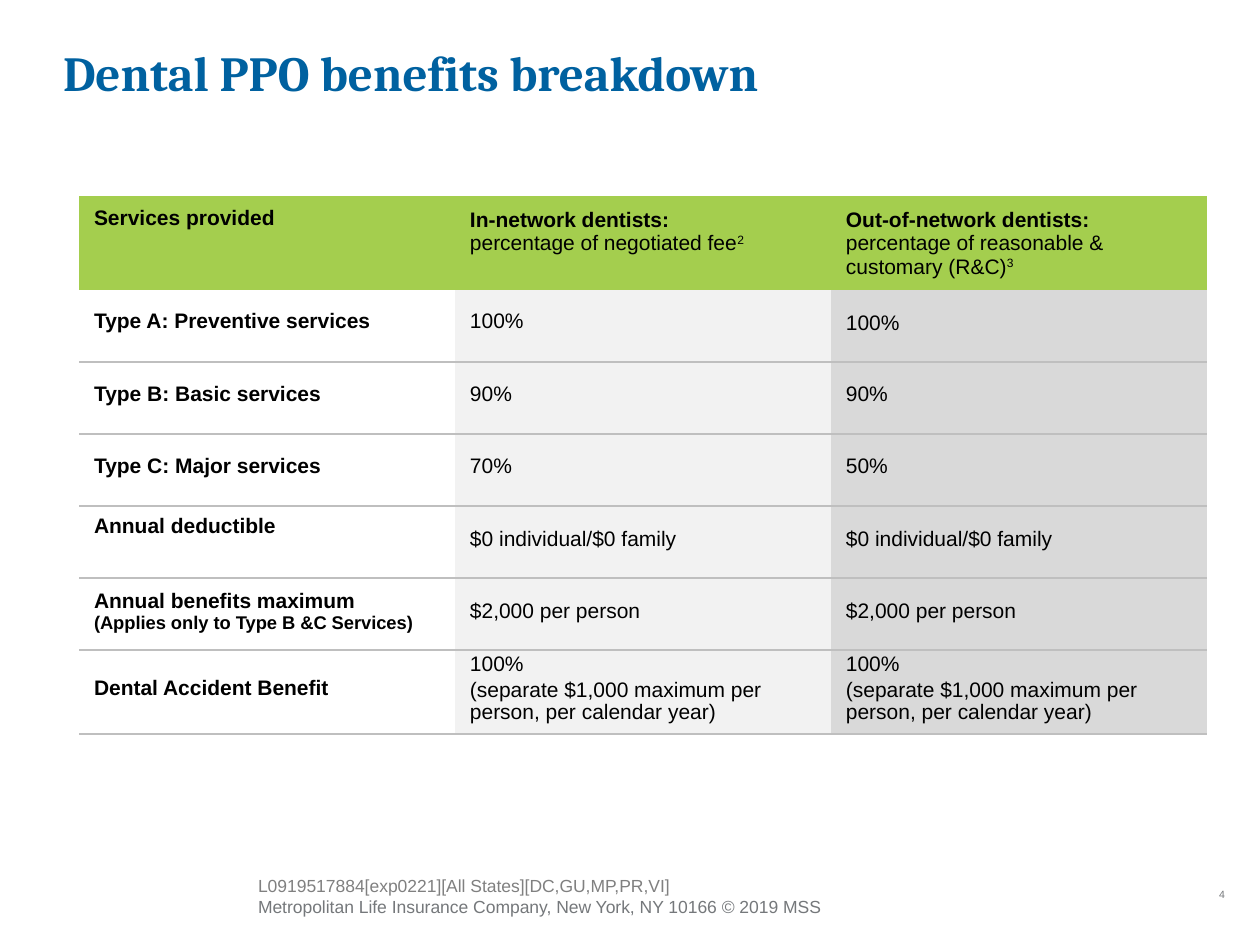
from dataclasses import dataclass

from lxml.etree import SubElement
from pptx import Presentation
from pptx.dml.color import RGBColor as Rgb
from pptx.enum.text import MSO_ANCHOR as Anchor, MSO_AUTO_SIZE as AutoSize, PP_ALIGN as Align
from pptx.oxml.ns import qn
from pptx.util import Pt


@dataclass(frozen=True)
class Theme:
    title_font: str = "Cambria"
    body_font: str = "Arial"
    blue: str = "0061A0"
    green: str = "A4CE4E"
    black: str = "000000"
    light: str = "F2F2F2"
    medium: str = "D9D9D9"
    rule: str = "BFBFBF"
    footer: str = "808080"
    footer_dark: str = "75787B"
    title_size: float = 28
    body_size: float = 12
    detail_size: float = 10.5
    footer_size: float = 10
    number_size: float = 6


theme = Theme()
PX = 914400 / 126


def px(*lengths):
    return [round(length * PX) for length in lengths]


def write(para, text, size=theme.body_size, color=theme.black, font=theme.body_font,
          bold=False, raised=False):
    """Append text to a paragraph; each newline becomes a line break."""
    for index, line in enumerate(text.split("\n")):
        if index:
            para.add_line_break()
        if not line:
            continue
        span = para.add_run()
        span.text = line
        span.font.size = Pt(size)
        span.font.name = font
        span.font.bold = bold
        span.font.color.rgb = Rgb.from_string(color)
        if raised:
            span.font._element.set("baseline", "30000")


deck = Presentation()
deck.slide_width, deck.slide_height = px(1260, 945)
page = deck.slides.add_slide(deck.slide_layouts[5])

# Title
title = page.shapes.title
title.left, title.top, title.width, title.height = px(63, 49, 1128, 67)
frame = title.text_frame
frame.margin_left = frame.margin_top = frame.margin_right = frame.margin_bottom = 0
frame.vertical_anchor = Anchor.TOP
frame.auto_size = AutoSize.NONE
para = frame.paragraphs[0]
para.alignment = Align.LEFT
para.line_spacing = 0.9
write(para, "Dental PPO benefits breakdown", size=theme.title_size, color=theme.blue,
      font=theme.title_font, bold=True)

# Benefits: each row has a height, line spacings and cells;
# a cell is a list of paragraphs, a paragraph a list of (text, format).
BOLD = {"bold": True}
RAISED = {"raised": True}


def plain(*texts, **style):
    return [[(text, style)] for text in texts]


accident = plain("100%", "(separate $1,000 maximum per person, per calendar year)")
deductible = plain("$0 individual/$0 family")
maximum = plain("$2,000 per person")
rows = [
    (94, (0.95, 1, 1), [
        plain("Services provided", **BOLD),
        [[("In-network dentists:\n", BOLD), ("percentage of negotiated fee", {}), ("2", RAISED)]],
        [[("Out-of-network dentists:\n", BOLD),
          ("percentage of reasonable & \ncustomary (R&C)", {}), ("3", RAISED)]],
    ]),
    (72, (0.85, 0.85, 1),
     [plain("Type A: Preventive services", **BOLD), plain("100%"), plain("100%")]),
    (72, (0.95, 0.95, 0.95),
     [plain("Type B: Basic services", **BOLD), plain("90%"), plain("90%")]),
    (72, (0.95, 0.95, 0.95),
     [plain("Type C: Major services", **BOLD), plain("70%"), plain("50%")]),
    (72, (0.95, 1, 1), [plain("Annual deductible", **BOLD), deductible, deductible]),
    (72, (1, 1, 1), [
        [[("Annual benefits maximum\n", BOLD),
          ("(Applies only to Type B &C Services)", {"bold": True, "size": theme.detail_size})]],
        maximum, maximum,
    ]),
    (84, (0.95, 0.95, 0.95),
     [plain("Dental Accident Benefit", **BOLD), accident, accident]),
]
column_fills = [None, theme.light, theme.medium]
DEDUCTIBLE_ROW = 4

holder = page.shapes.add_table(len(rows), 3, *px(79, 196, 3 * 376, sum(row[0] for row in rows)))
table = holder.table
table.first_row = table.horz_banding = False
no_style = "{2D5ABB26-0587-4C30-8999-92F81FD0307C}"
next(holder.element.iter(qn("a:tableStyleId"))).text = no_style
for column in table.columns:
    column.width = px(376)[0]

for row_index, (height, spacings, cells) in enumerate(rows):
    table.rows[row_index].height = px(height)[0]
    header = row_index == 0
    for column_index, paragraphs in enumerate(cells):
        cell = table.cell(row_index, column_index)
        raised_label = row_index == DEDUCTIBLE_ROW and column_index == 0
        cell.margin_left, cell.margin_right, cell.margin_top, cell.margin_bottom = px(
            15, 15, 12 if header else 0, 30 if raised_label else 6)
        cell.vertical_anchor = Anchor.TOP if header else Anchor.MIDDLE
        if not header:
            border = SubElement(cell._tc.get_or_add_tcPr(), qn("a:lnB"), w=str(Pt(1)))
            paint = SubElement(border, qn("a:solidFill"))
            SubElement(paint, qn("a:srgbClr"), val=theme.rule)
        fill = theme.green if header else column_fills[column_index]
        if fill:
            cell.fill.solid()
            cell.fill.fore_color.rgb = Rgb.from_string(fill)
        else:
            cell.fill.background()
        for index, spans in enumerate(paragraphs):
            para = cell.text_frame.add_paragraph() if index else cell.text_frame.paragraphs[0]
            para.line_spacing = spacings[column_index]
            if index:
                para.space_before = Pt(2.4)
            for text, style in spans:
                write(para, text, **style)

# Footer and page number
footer = page.shapes.add_textbox(*px(253, 873, 684, 50)).text_frame
footer.word_wrap = True
footer.vertical_anchor = Anchor.BOTTOM
footer.margin_left, footer.margin_top, footer.margin_right, footer.margin_bottom = px(5, 6, 13, 6)
write(footer.paragraphs[0], "L0919517884[exp0221][All States][DC,GU,MP,PR,VI]",
      size=theme.footer_size, color=theme.footer)
write(footer.add_paragraph(),
      "Metropolitan Life Insurance Company, New York, NY 10166 © 2019 MSS",
      size=theme.footer_size, color=theme.footer_dark)

number = page.shapes.add_textbox(*px(1184, 878, 76, 32)).text_frame
number.word_wrap = True
number.vertical_anchor = Anchor.MIDDLE
number.paragraphs[0].alignment = Align.CENTER
write(number.paragraphs[0], "4", size=theme.number_size, color=theme.footer_dark)

deck.save("out.pptx")
